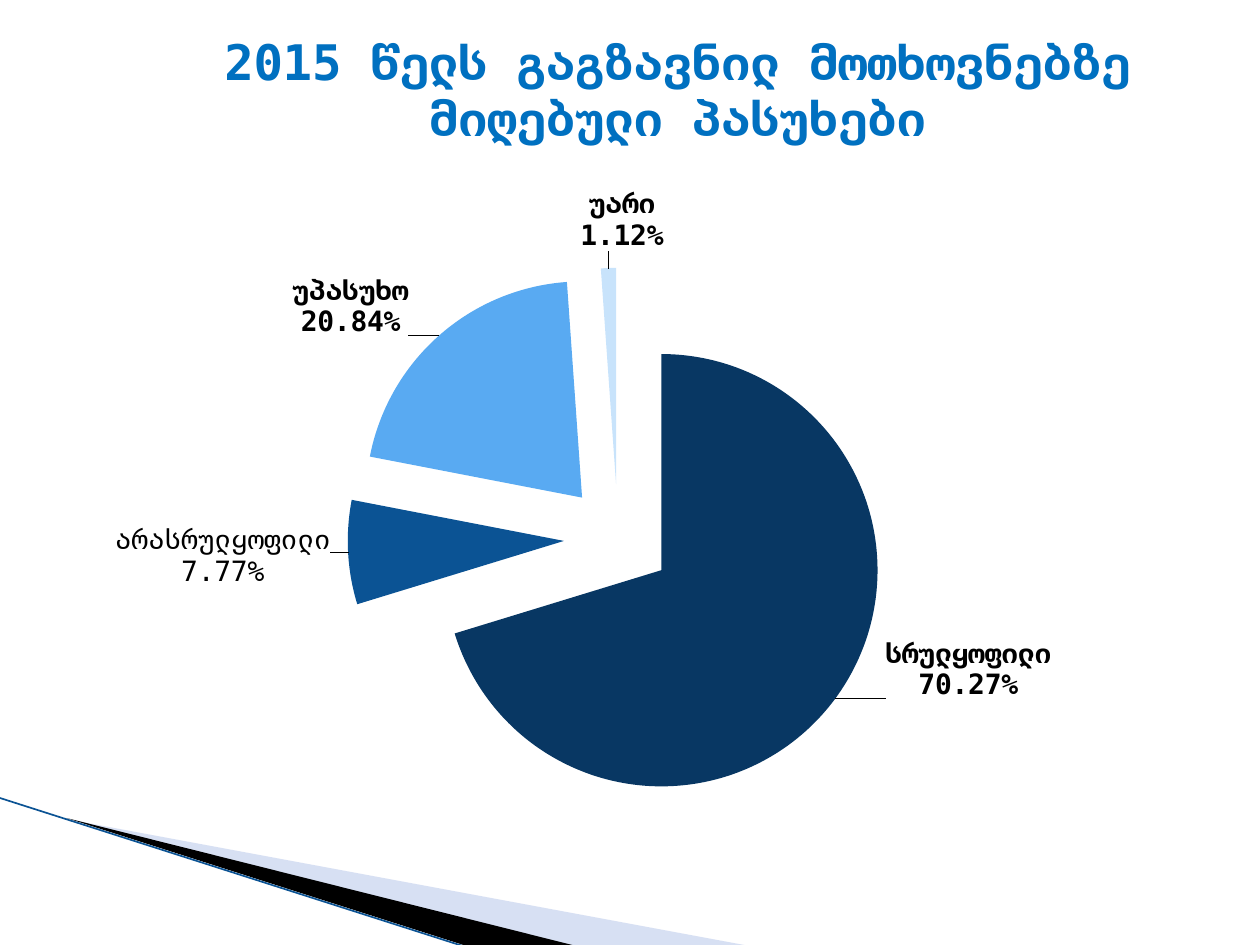
from dataclasses import dataclass

from lxml import etree
from pptx import Presentation
from pptx.chart.chart import Chart
from pptx.chart.data import CategoryChartData
from pptx.chart.datalabel import DataLabel
from pptx.dml.color import RGBColor
from pptx.enum.chart import XL_CHART_TYPE, XL_LABEL_POSITION
from pptx.enum.shapes import MSO_CONNECTOR
from pptx.oxml.ns import qn
from pptx.slide import Slide
from pptx.text.text import Font
from pptx.util import Pt

PIE = XL_CHART_TYPE.PIE
OUTSIDE = XL_LABEL_POSITION.OUTSIDE_END
STRAIGHT = MSO_CONNECTOR.STRAIGHT

FONT = "DejaVu Sans Mono"
TITLE = "2015 წელს გაგზავნილ მოთხოვნებზე მიღებული პასუხები"
BLACK = RGBColor(0x00, 0x00, 0x00)
TITLE_BLUE = RGBColor(0x00, 0x70, 0xC0)
PALE_BLUE = RGBColor(0x9D, 0xB2, 0xE1)
EDGE_BLUE = RGBColor(0x0B, 0x53, 0x94)


@dataclass(frozen=True)
class Slice:
    name: str
    percent: float
    color: RGBColor
    label_shift: tuple[float, float]
    plain: bool = False


@dataclass(frozen=True)
class Wedge:
    frame: tuple[float, float, float, float]
    points: tuple[tuple[float, float], ...]
    color: RGBColor
    opacity: int = 100


SLICES = (
    Slice("სრულყოფილი", 70.27, RGBColor(0x08, 0x37, 0x63), (0.035, -0.072)),
    Slice("არასრულყოფილი", 7.77, RGBColor(0x0B, 0x53, 0x94), (-0.008, 0.004), True),
    Slice("უპასუხო", 20.84, RGBColor(0x59, 0xAA, 0xF2), (-0.02, 0.009)),
    Slice("უარი", 1.12, RGBColor(0xC8, 0xE3, 0xFB), (0.011, -0.01)),
)
WEDGES = (
    Wedge((56.2, 393.8, 299.5, 113.8),
          ((39.6, 468.4), (428, 540.5), (328, 540.5)), PALE_BLUE, 40),
    Wedge((-4.3, 455.8, 299.5, 66.2),
          ((38.2, 467.5), (329, 540.5), (268, 541)), BLACK),
)


def draw_wedge(page: Slide, wedge: Wedge) -> None:
    """Draw a wedge whose outline may reach beyond its frame."""
    corners = [(Pt(x), Pt(y)) for x, y in wedge.points]
    builder = page.shapes.build_freeform(*corners[0])
    builder.add_line_segments(corners[1:], close=True)
    shape = builder.convert_to_shape()
    left, top, width, height = map(Pt, wedge.frame)
    outline = shape._element.find(".//" + qn("a:path"))
    for corner in outline.iter(qn("a:pt")):
        corner.set("x", str(int(corner.get("x")) + shape.left - left))
        corner.set("y", str(int(corner.get("y")) + shape.top - top))
    outline.set("w", str(int(width)))
    outline.set("h", str(int(height)))
    shape.left, shape.top, shape.width, shape.height = left, top, width, height
    shape.shadow.inherit = False
    shape.line.fill.background()
    shape.fill.solid()
    shape.fill.fore_color.rgb = wedge.color
    if wedge.opacity < 100:
        color = shape._element.spPr.find(".//" + qn("a:srgbClr"))
        etree.SubElement(color, qn("a:alpha"), val=str(wedge.opacity * 1000))


def draw_edge(page: Slide) -> None:
    edge = page.shapes.add_connector(STRAIGHT, Pt(-0.7), Pt(455.8), Pt(267), Pt(541.4))
    edge.line.color.rgb = EDGE_BLUE
    edge.line.width = Pt(0.95)
    etree.SubElement(edge._element.spPr, qn("a:effectLst"))


def style(font: Font, size: float, color: RGBColor, bold: bool) -> None:
    font.name = FONT
    font.size = Pt(size)
    font.bold = bold
    font.color.rgb = color


def place(parent: etree._Element, index: int, **settings: str | float) -> None:
    """Give a chart part a manual layout, in fractions of the chart."""
    layout = parent.find(qn("c:layout"))
    if layout is None:
        layout = etree.Element(qn("c:layout"))
        parent.insert(index, layout)
    manual = etree.SubElement(layout, qn("c:manualLayout"))
    for name, value in settings.items():
        etree.SubElement(manual, qn(f"c:{name}"), val=str(value))


def add_title(chart: Chart) -> None:
    chart.has_title = True
    span = chart.chart_title.text_frame.paragraphs[0].add_run()
    span.text = TITLE
    style(span.font, 28, TITLE_BLUE, True)
    place(chart.chart_title._element, 1, xMode="edge", yMode="edge", x=0.171, y=-0.01)


def add_separator(labels: etree._Element) -> None:
    separator = etree.Element(qn("c:separator"))
    separator.text = "\n"
    labels.find(qn("c:showBubbleSize")).addnext(separator)


def write_plain_label(label: DataLabel, item: Slice) -> None:
    frame = label.text_frame
    paragraphs = (frame.paragraphs[0], frame.add_paragraph())
    for para, text in zip(paragraphs, (item.name, f"{item.percent}%")):
        span = para.add_run()
        span.text = text
        style(span.font, 16, BLACK, False)


def add_labels(chart: Chart) -> None:
    series = chart.plots[0].series[0]
    labels = series.data_labels
    labels.show_value = False
    labels.show_category_name = True
    labels.show_percentage = True
    labels.number_format = "0.00%"
    labels.number_format_is_linked = False
    labels.position = OUTSIDE
    style(labels.font, 16, BLACK, True)
    add_separator(labels._element)

    for index, item in enumerate(SLICES):
        label = series.points[index].data_label
        if item.plain:
            write_plain_label(label, item)
        else:
            style(label.font, 16, BLACK, True)
        label.position = OUTSIDE
        entry = labels._element.findall(qn("c:dLbl"))[index]
        for name, shown in (("Val", 0), ("CatName", 1), ("Percent", 1)):
            entry.find(qn(f"c:show{name}")).set("val", str(shown))
        if not item.plain:
            number_format = etree.Element(
                qn("c:numFmt"), formatCode="0.00%", sourceLinked="0")
            entry.insert(1, number_format)
        add_separator(entry)
        shift_x, shift_y = item.label_shift
        place(entry, 1, x=shift_x, y=shift_y)


def draw_pie(page: Slide) -> None:
    data = CategoryChartData()
    data.categories = [item.name for item in SLICES]
    data.add_series("Series 1", [item.percent for item in SLICES])
    chart = page.shapes.add_chart(PIE, Pt(0), Pt(12), Pt(720), Pt(514), data).chart
    chart.has_legend = False
    style(chart.font, 10, BLACK, False)
    chart.plots[0].vary_by_categories = True
    series = chart.plots[0].series[0]
    for index, item in enumerate(SLICES):
        point = series.points[index].format
        point.fill.solid()
        point.fill.fore_color.rgb = item.color
        point.line.fill.background()
    explosion = etree.Element(qn("c:explosion"), val="25")
    series._element.find(qn("c:dPt")).addprevious(explosion)
    add_title(chart)
    add_labels(chart)
    plot_area = chart._chartSpace.find(".//" + qn("c:plotArea"))
    place(plot_area, 0, layoutTarget="inner", xMode="edge", yMode="edge",
          x=0.276, y=0.252, w=0.429, h=0.646)


def main() -> None:
    deck = Presentation()
    deck.slide_width = Pt(720)
    deck.slide_height = Pt(540)
    page = deck.slides.add_slide(deck.slide_layouts[6])
    for wedge in WEDGES:
        draw_wedge(page, wedge)
    draw_edge(page)
    draw_pie(page)
    deck.save("out.pptx")


if __name__ == "__main__":
    main()
